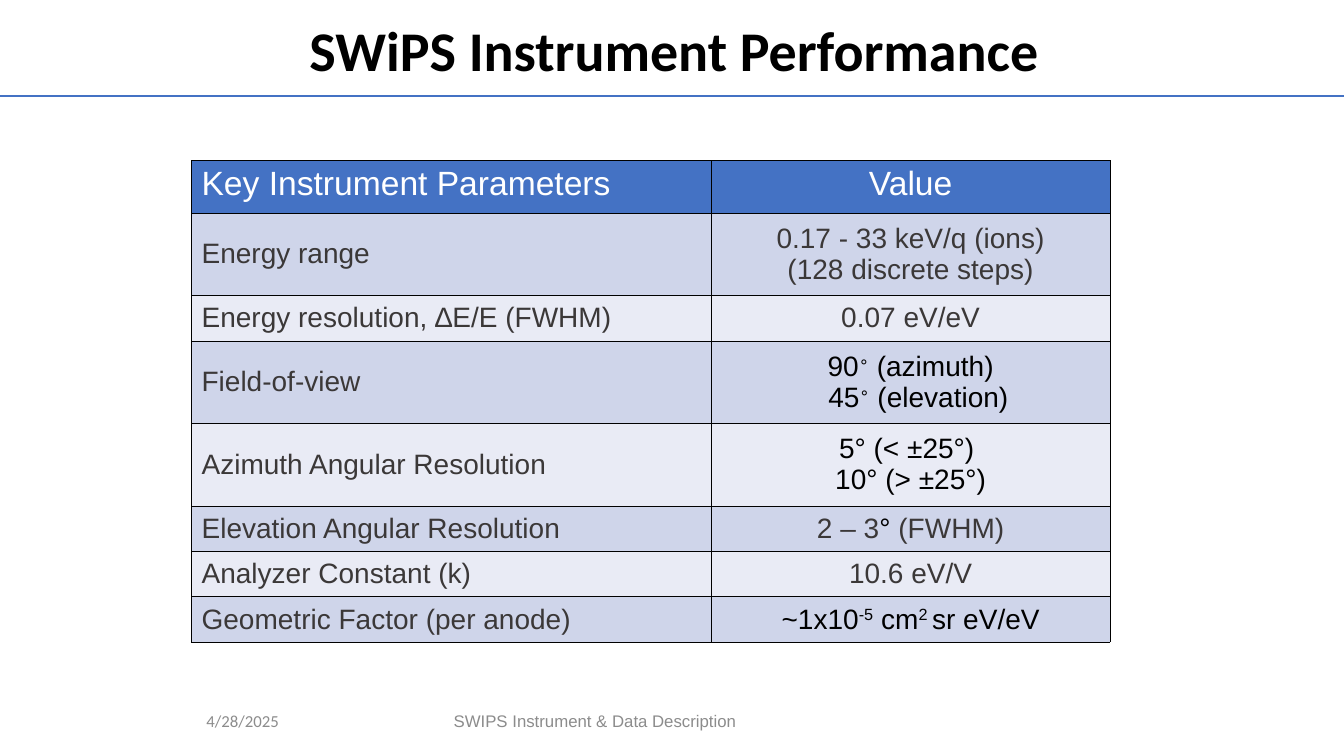
from dataclasses import dataclass

from lxml import etree
from pptx import Presentation
from pptx import util as u
from pptx.dml import color
from pptx.enum import shapes, text
from pptx.oxml import ns

COLORS = {
    "accent": "4472C4", "band_dark": "CFD5EA", "band_light": "E9EBF5",
    "black": "000000", "white": "FFFFFF", "ink": "3B3838", "grey": "8C8C8C",
}
CENTER, LEFT = text.PP_ALIGN.CENTER, text.PP_ALIGN.LEFT
MIDDLE, TOP = text.MSO_ANCHOR.MIDDLE, text.MSO_ANCHOR.TOP
TALL, SHORT = 59, 32.4


@dataclass(frozen=True)
class Run:
    text: str
    color: str = "ink"
    sup: bool = False


@dataclass(frozen=True)
class Line:
    runs: tuple[Run, ...]
    indent: float = 0


@dataclass(frozen=True)
class Row:
    parameter: str
    value: tuple[Line, ...]
    height: float = SHORT


@dataclass(frozen=True)
class Label:
    text: str
    left: float
    width: float
    font: str
    align: text.PP_ALIGN


def plain(*lines: str, color: str = "ink") -> tuple[Line, ...]:
    return tuple(Line((Run(line, color),)) for line in lines)


def angle(degrees: str, axis: str, indent: float = 0) -> Line:
    return Line((Run(degrees, "black"), Run("∘", "black", True),
                 Run(f" ({axis})", "black")), indent)


ROWS = (
    Row("Energy range", plain("0.17 - 33 keV/q (ions)", "(128 discrete steps)"), TALL),
    Row("Energy resolution, ∆E/E (FWHM)", plain("0.07 eV/eV")),
    Row("Field-of-view", (angle("90", "azimuth"), angle("45", "elevation", 11)), TALL),
    Row("Azimuth Angular Resolution",
        plain("5° (< ±25°) ", "10° (> ±25°)", color="black"), TALL),
    Row("Elevation Angular Resolution",
        (Line((Run("2 – 3"), Run("° ", "black"), Run("(FWHM)"))),)),
    Row("Analyzer Constant (k)", plain("10.6 eV/V")),
    Row("Geometric Factor (per anode)",
        (Line((Run("~1x10", "black"), Run("-5", "black", True), Run(" cm", "black"),
               Run("2 ", "black", True), Run("sr eV/eV", "black"))),)),
)
LABELS = (
    Label("4/28/2025", 140.4, 153.4, "Calibri", LEFT),
    Label("SWIPS Instrument & Data Description", 264.2, 321.8, "Arial", CENTER),
)


def rgb(name: str) -> color.RGBColor:
    return color.RGBColor.from_string(COLORS[name])


def add_run(p, run: Run, size: float, font: str = "Arial", bold: bool = False) -> None:
    r = p.add_run()
    r.text = run.text
    r.font.name, r.font.size, r.font.bold = font, u.Pt(size), bold
    r.font.color.rgb = rgb(run.color)
    if run.sup:
        r.font._element.set("baseline", "30000")


def add_borders(cell) -> None:
    tc_pr = cell._tc.get_or_add_tcPr()
    for side in ("lnL", "lnR", "lnT", "lnB"):
        ln = etree.SubElement(tc_pr, ns.qn(f"a:{side}"), w=str(u.Pt(0.25)))
        fill = etree.SubElement(ln, ns.qn("a:solidFill"))
        etree.SubElement(fill, ns.qn("a:srgbClr"), val=COLORS["black"])


def fill_cell(cell, lines: tuple[Line, ...], fill: str, size: float,
              align: text.PP_ALIGN, anchor: text.MSO_ANCHOR) -> None:
    add_borders(cell)
    cell.fill.solid()
    cell.fill.fore_color.rgb = rgb(fill)
    cell.vertical_anchor = anchor
    tf = cell.text_frame
    for i, line in enumerate(lines):
        p = tf.add_paragraph() if i else tf.paragraphs[0]
        p.alignment = align
        if line.indent:
            p._p.get_or_add_pPr().set("marL", str(u.Pt(line.indent)))
        for run in line.runs:
            add_run(p, run, size)


def add_title(s, title: str) -> None:
    sp = s.shapes.title
    sp.left, sp.top, sp.width, sp.height = u.Pt(1.4), u.Pt(4.3), u.Pt(960), u.Pt(67.7)
    tf = sp.text_frame
    tf.vertical_anchor = MIDDLE
    p = tf.paragraphs[0]
    p.alignment, p.line_spacing = CENTER, 0.9
    add_run(p, Run(title, "black"), 40, "Calibri", True)


def add_rule(s) -> None:
    y = u.Pt(68.6)
    ln = s.shapes.add_connector(shapes.MSO_CONNECTOR.STRAIGHT, 0, y, u.Pt(960), y)
    ln.line.color.rgb, ln.line.width = rgb("accent"), u.Pt(1.5)
    etree.SubElement(ln._element.spPr, ns.qn("a:effectLst"))


def add_parameter_table(s) -> None:
    heights = [37.5, *(row.height for row in ROWS)]
    widths = [371.5, 284.4]
    tbl = s.shapes.add_table(len(heights), 2, u.Pt(136.8), u.Pt(114.5),
                             u.Pt(sum(widths)), u.Pt(sum(heights))).table
    tbl.horz_banding = False
    for col, width in zip(tbl.columns, widths):
        col.width = u.Pt(width)
    for row, height in zip(tbl.rows, heights):
        row.height = u.Pt(height)
    heads = (("Key Instrument Parameters", LEFT), ("Value", CENTER))
    for c, (head, align) in enumerate(heads):
        fill_cell(tbl.cell(0, c), plain(head, color="white"), "accent", 24, align, TOP)
    for i, row in enumerate(ROWS, 1):
        band = "band_dark" if i % 2 else "band_light"
        fill_cell(tbl.cell(i, 0), plain(row.parameter), band, 20, LEFT, MIDDLE)
        fill_cell(tbl.cell(i, 1), row.value, band, 20, CENTER, MIDDLE)


def add_label(s, label: Label) -> None:
    sp = s.shapes.add_textbox(u.Pt(label.left), u.Pt(500.4), u.Pt(label.width), u.Pt(28.8))
    tf = sp.text_frame
    tf.word_wrap, tf.vertical_anchor = True, MIDDLE
    p = tf.paragraphs[0]
    p.alignment = label.align
    add_run(p, Run(label.text, "grey"), 12, label.font)


def main() -> None:
    prs = Presentation()
    prs.slide_width, prs.slide_height = u.Pt(960), u.Pt(540)
    s = prs.slides.add_slide(prs.slide_layouts.get_by_name("Title Only"))
    add_rule(s)
    add_title(s, "SWiPS Instrument Performance")
    add_parameter_table(s)
    for label in LABELS:
        add_label(s, label)
    prs.save("out.pptx")


if __name__ == "__main__":
    main()
